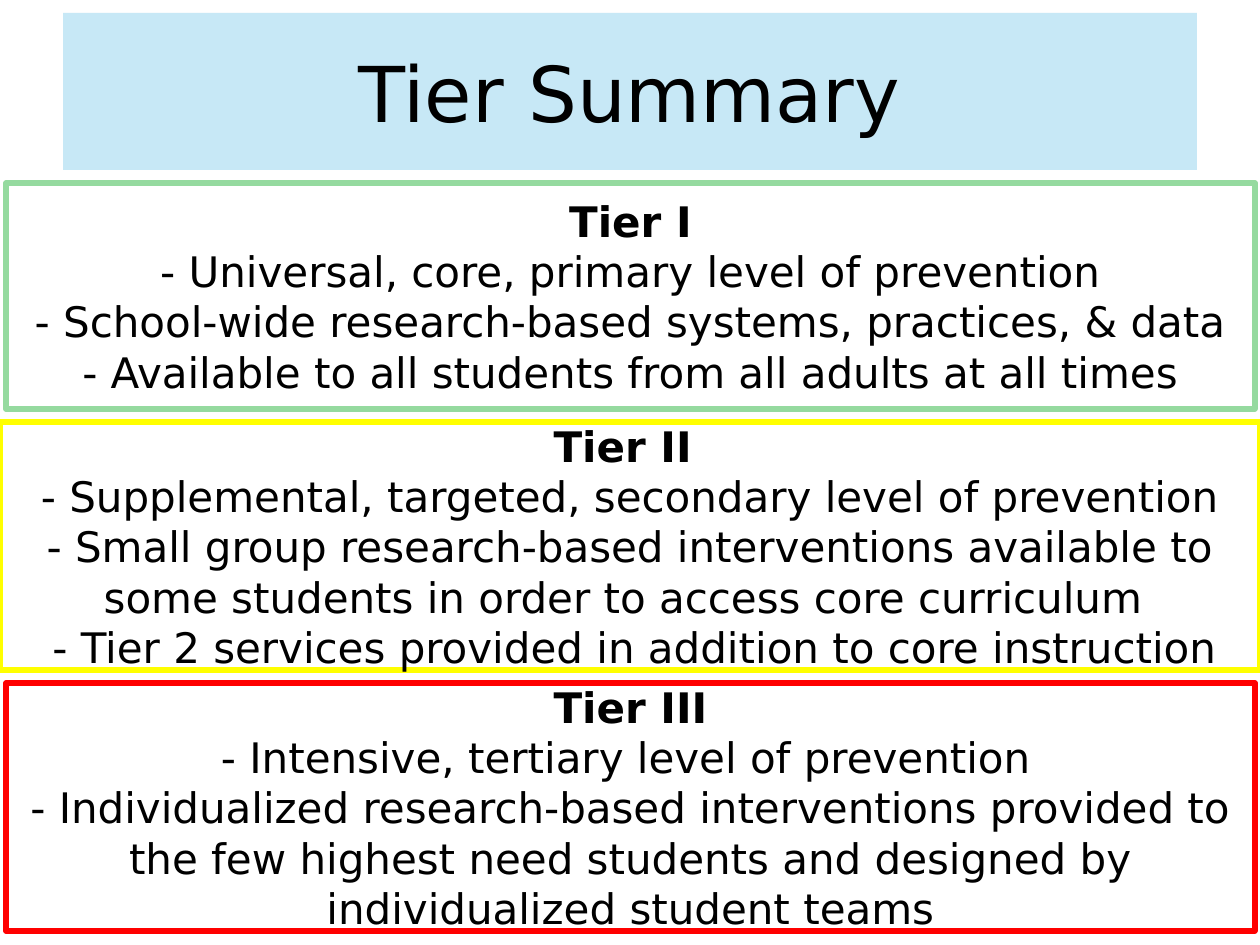
from dataclasses import dataclass

from lxml import etree
from pptx import Presentation
from pptx.dml.color import RGBColor
from pptx.enum.shapes import MSO_SHAPE
from pptx.enum.text import MSO_ANCHOR, MSO_AUTO_SIZE, PP_ALIGN
from pptx.oxml.ns import qn
from pptx.util import Emu, Pt

RECT = MSO_SHAPE.RECTANGLE
MIDDLE = MSO_ANCHOR.MIDDLE
NO_FIT = MSO_AUTO_SIZE.NONE
CENTER, LEFT = PP_ALIGN.CENTER, PP_ALIGN.LEFT

SCALE = 914400 / 126
FONT = "DejaVu Sans"
COLORS = {
    "text": "000000",
    "title": "A9DCF2",
    "green": "95DA9F",
    "yellow": "FFFF00",
    "red": "FF0000",
}


@dataclass
class Tier:
    box: tuple[int, int, int, int]
    color: str
    head: str
    points: list[str]
    indent: int = 0  # px; above zero, the last point is left-aligned


TIERS = [
    Tier((6, 183, 1249, 226), "green", "Tier I", [
        "- Universal, core, primary level of prevention",
        "- School-wide research-based systems, practices, & data",
        "- Available to all students from all adults at all times",
    ]),
    Tier((0, 422, 1260, 248), "yellow", "Tier II ", [
        "- Supplemental, targeted, secondary level of prevention",
        "- Small group research-based interventions available to some "
        "students in order to access core curriculum ",
        "- Tier 2 services provided in addition to core instruction",
    ], indent=40),
    Tier((6, 683, 1249, 248), "red", "Tier III", [
        "- Intensive, tertiary level of prevention\t",
        "- Individualized research-based interventions provided to the few "
        "highest need students and designed by individualized student teams",
    ]),
]


def px(n: int) -> Emu:
    return Emu(round(n * SCALE))


def rgb(name: str) -> RGBColor:
    return RGBColor.from_string(COLORS[name])


def style(para, size: int, bold: bool = False) -> None:
    para.alignment = CENTER
    for run in para.runs:
        run.font.name = FONT
        run.font.size = Pt(size)
        run.font.bold = bold
        run.font.color.rgb = rgb("text")


def add_title(slide, text: str) -> None:
    title = slide.shapes.title
    title.left, title.top, title.width, title.height = map(
        px, (63, 13, 1134, 157))
    title.fill.solid()
    title.fill.fore_color.rgb = rgb("title")
    fill = title.fill._xPr.find(qn("a:solidFill"))
    etree.SubElement(fill[0], qn("a:alpha"), val="65000")
    frame = title.text_frame
    frame.text = text
    frame.auto_size = NO_FIT
    frame.vertical_anchor = MIDDLE
    style(frame.paragraphs[0], 44)


def add_tier(slide, tier: Tier) -> None:
    box = slide.shapes.add_shape(RECT, *map(px, tier.box))
    box.shadow.inherit = False
    box.fill.background()
    box.line.color.rgb = rgb(tier.color)
    box.line.width = Pt(3)
    frame = box.text_frame
    frame.word_wrap = True
    frame.vertical_anchor = MIDDLE
    frame.text = "\n".join([tier.head, *tier.points])
    for i, para in enumerate(frame.paragraphs):
        style(para, 24, bold=i == 0)
    if tier.indent:
        last = frame.paragraphs[-1]
        last.alignment = LEFT
        last._p.get_or_add_pPr().set("indent", str(px(tier.indent)))


def main() -> None:
    deck = Presentation()
    deck.slide_width, deck.slide_height = px(1260), px(945)
    slide = deck.slides.add_slide(deck.slide_layouts[5])
    add_title(slide, "Tier Summary")
    for tier in TIERS:
        add_tier(slide, tier)
    deck.save("out.pptx")


if __name__ == "__main__":
    main()
